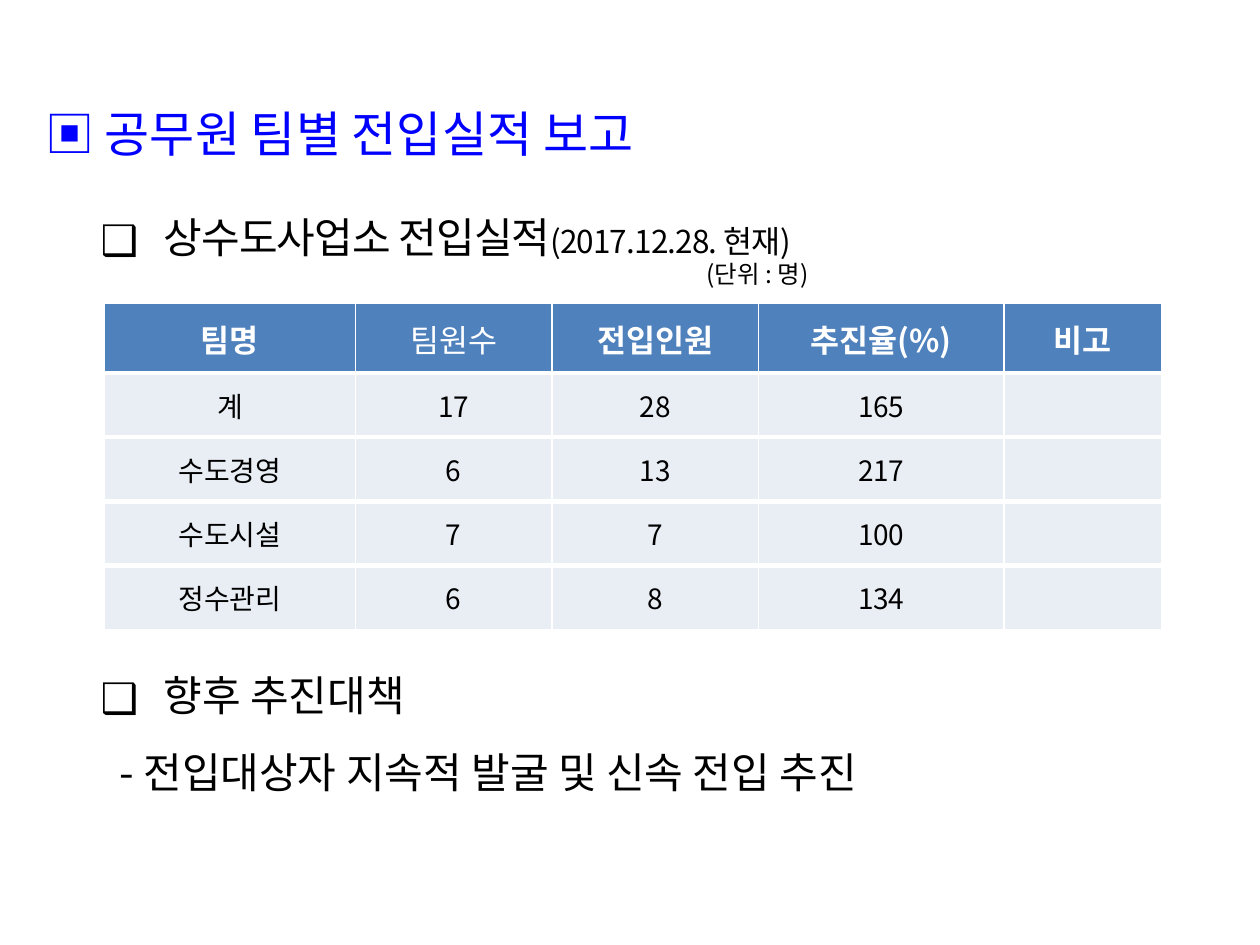
from lxml.etree import SubElement
from pptx import Presentation
from pptx.dml.color import RGBColor
from pptx.enum.text import MSO_ANCHOR, PP_ALIGN
from pptx.oxml.ns import qn
from pptx.util import Inches, Pt

FONT = "Noto Sans CJK KR"
BLUE = RGBColor(0x00, 0x00, 0xFF)
BLACK = RGBColor(0x00, 0x00, 0x00)
WHITE = RGBColor(0xFF, 0xFF, 0xFF)
HEADER_FILL = RGBColor(0x4F, 0x81, 0xBD)
BODY_FILL = RGBColor(0xE9, 0xED, 0xF4)

# Paragraph: left margin and first-line indent (in), line height (pt), bullet,
# runs of (text, size, colour, letter spacing in pt)
REPORT = [
    (0.56, -0.5, 46, None, [("▣ 공무원 팀별 전입실적 보고", 28, BLUE, 0)]),
    (1, -0.5, 57, "❑", [("상수도사업소 전입실적", 24, BLACK, -0.5),
                        ("(2017.12.28. 현재)", 18, BLACK, -0.5)]),
    (5.31, 0, 15, None, [("(단위 : 명)", 14, BLACK, 0)]),
]
PLAN = [
    (1, -0.5, 44.5, "❑", [("향후 추진대책", 24, BLACK, 0)]),
    (1, -0.35, 44, None, [("- 전입대상자 지속적 발굴 및 신속 전입 추진", 24, BLACK, 0)]),
]

RESULTS = [
    ("팀명", "팀원수", "전입인원", "추진율(%)", "비고"),
    ("계", "17", "28", "165", ""),
    ("수도경영", "6", "13", "217", ""),
    ("수도시설", "7", "7", "100", ""),
    ("정수관리", "6", "8", "134", ""),
]
COLUMN_WIDTHS = [1.99, 1.56, 1.64, 1.95, 1.25]
ROW_HEIGHTS = [0.55] + [0.51] * 4
LIGHT_HEADER = "팀원수"


def add_run(para, text, size, color, bold=False, spacing=0):
    run = para.add_run()
    run.text = text
    font = run.font
    font.name, font.size, font.bold = FONT, Pt(size), bold
    font.color.rgb = color
    properties = run._r.get_or_add_rPr()
    SubElement(properties, qn("a:ea"), typeface=FONT)
    if spacing:
        properties.set("spc", str(int(spacing * 100)))


def add_outline(page, top, height, paragraphs):
    box = page.shapes.add_textbox(Inches(0.2), Inches(top), Inches(9.57), Inches(height))
    frame = box.text_frame
    frame.word_wrap = True
    for index, (margin, indent, line_height, bullet, runs) in enumerate(paragraphs):
        para = frame.paragraphs[0] if index == 0 else frame.add_paragraph()
        properties = para._p.get_or_add_pPr()
        properties.set("marL", str(Inches(margin)))
        properties.set("indent", str(Inches(indent)))
        para.line_spacing = Pt(line_height)
        if bullet:
            bullet_color = SubElement(properties, qn("a:buClr"))
            SubElement(bullet_color, qn("a:srgbClr"), val=str(BLACK))
            SubElement(properties, qn("a:buFont"), typeface=FONT)
            SubElement(properties, qn("a:buChar"), char=bullet)
        else:
            SubElement(properties, qn("a:buNone"))
        for text, size, color, spacing in runs:
            add_run(para, text, size, color, spacing=spacing)


def set_borders(cell, top, bottom):
    """Give a cell white borders: 1 pt at the sides, the given widths above and below."""
    properties = cell._tc.get_or_add_tcPr()
    for side, width in (("L", 1), ("R", 1), ("T", top), ("B", bottom)):
        line = SubElement(properties, qn("a:ln" + side), w=str(Pt(width)))
        fill = SubElement(line, qn("a:solidFill"))
        SubElement(fill, qn("a:srgbClr"), val=str(WHITE))


def add_results(page):
    last = len(RESULTS) - 1
    table = page.shapes.add_table(
        len(RESULTS), len(COLUMN_WIDTHS), Inches(0.83), Inches(2.41),
        Inches(sum(COLUMN_WIDTHS)), Inches(sum(ROW_HEIGHTS))).table
    for column, width in zip(table.columns, COLUMN_WIDTHS):
        column.width = Inches(width)
    for r, values in enumerate(RESULTS):
        table.rows[r].height = Inches(ROW_HEIGHTS[r])
        header = r == 0
        for c, value in enumerate(values):
            cell = table.cell(r, c)
            set_borders(cell, 1 if header else 3, 1 if r == last else 3)
            cell.fill.solid()
            cell.fill.fore_color.rgb = HEADER_FILL if header else BODY_FILL
            cell.vertical_anchor = MSO_ANCHOR.MIDDLE
            para = cell.text_frame.paragraphs[0]
            para.alignment = PP_ALIGN.CENTER
            if value:
                add_run(para, value, 18 if header else 16, WHITE if header else BLACK,
                        bold=header and value != LIGHT_HEADER)


deck = Presentation()
deck.slide_width, deck.slide_height = Inches(10), Inches(7.5)
page = deck.slides.add_slide(deck.slide_layouts[6])
add_outline(page, 0.6, 6.38, REPORT)
add_results(page)
add_outline(page, 5.05, 2.06, PLAN)
deck.save("out.pptx")
